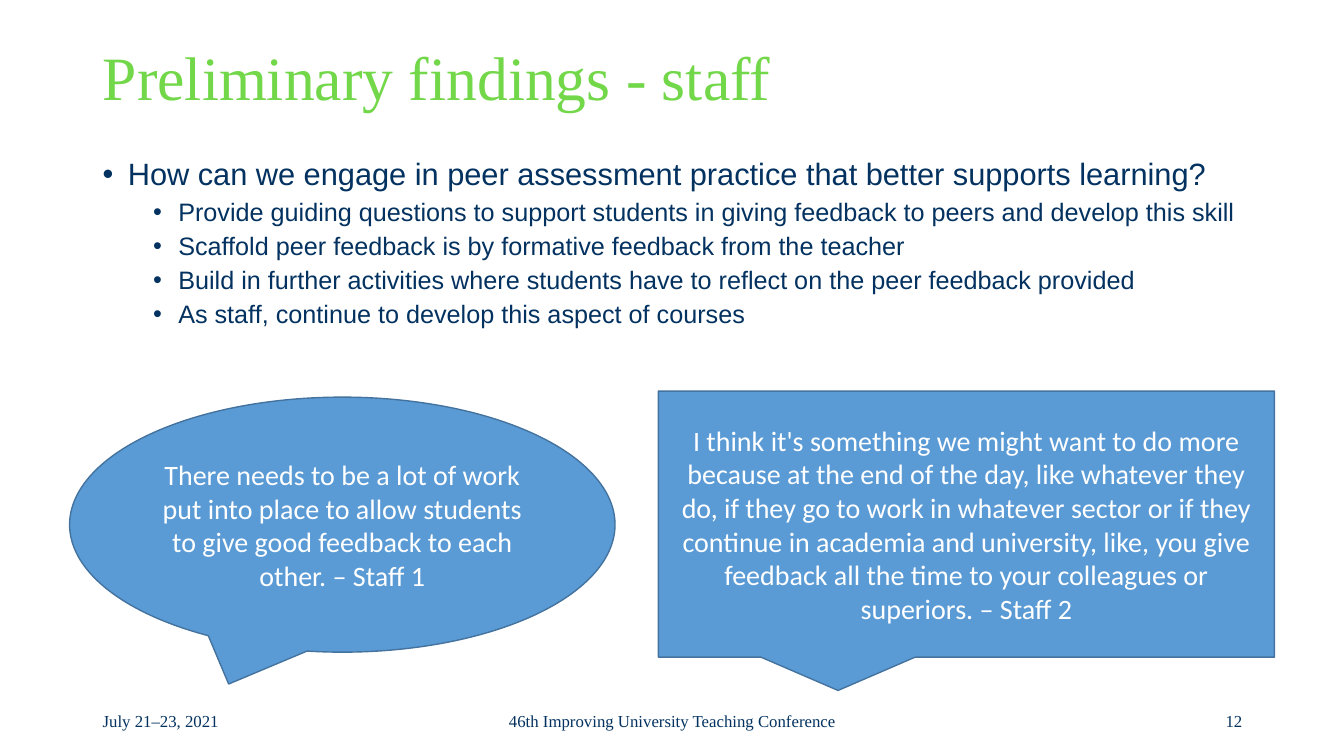
from dataclasses import dataclass

from lxml.etree import SubElement
from pptx import Presentation
from pptx.dml.color import RGBColor
from pptx.enum.shapes import MSO_SHAPE as Shape
from pptx.enum.text import MSO_ANCHOR as Anchor, MSO_AUTO_SIZE as AutoSize, PP_ALIGN as Align
from pptx.oxml.ns import qn
from pptx.util import Inches, Pt

GREEN, NAVY, BLUE, DARK_BLUE, WHITE = "72D749", "033260", "5B9BD5", "43739E", "FFFFFF"
SERIF, SANS, QUOTE_FONT = "Times New Roman", "Arial", "Calibri"


@dataclass(frozen=True)
class Box:
    left: float
    top: float
    width: float
    height: float

    def lengths(self):
        return [Inches(v) for v in (self.left, self.top, self.width, self.height)]


@dataclass(frozen=True)
class Footer:
    text: str
    box: Box
    align: Align


@dataclass(frozen=True)
class Quote:
    text: str
    box: Box
    kind: Shape


@dataclass(frozen=True)
class Level:
    size: float
    indent: float
    before: float


TITLE_BOX = Box(0.92, 0.4, 11.5, 0.8)
BODY_BOX = Box(0.92, 1.53, 11.5, 2.57)
LEVELS = [Level(22, 0.25, 0), Level(18, 0.75, 5)]
FINDINGS = [
    (0, "How can we engage in peer assessment practice that better supports learning?"),
    (1, "Provide guiding questions to support students in giving feedback to peers and develop this skill"),
    (1, "Scaffold peer feedback is by formative feedback from the teacher"),
    (1, "Build in further activities where students have to reflect on the peer feedback provided"),
    (1, "As staff, continue to develop this aspect of courses"),
]
FOOTERS = [
    Footer("12", Box(9.42, 6.95, 3, 0.4), Align.RIGHT),
    Footer("July 21–23, 2021", Box(0.92, 6.95, 3, 0.4), Align.LEFT),
    Footer("46th Improving University Teaching Conference", Box(4.42, 6.95, 4.5, 0.4), Align.CENTER),
]
QUOTES = [
    Quote(
        "I think it's something we might want to do more because at the end of the day, "
        "like whatever they do, if they go to work in whatever sector or if they continue "
        "in academia and university, like, you give feedback all the time to your "
        "colleagues or superiors. – Staff 2",
        Box(6.53, 3.88, 6.11, 2.64), Shape.RECTANGULAR_CALLOUT),
    Quote(
        "There needs to be a lot of work put into place to allow students to give good "
        "feedback to each other. – Staff 1",
        Box(0.69, 3.94, 5.41, 2.53), Shape.OVAL_CALLOUT),
]


def rgb(color: str) -> RGBColor:
    return RGBColor.from_string(color)


def write(p, text: str, *, size: float, font: str, color: str,
          align: Align = Align.LEFT, spacing: float = 1.0, before: float = 0) -> None:
    p.alignment = align
    p.line_spacing = spacing
    p.space_before = Pt(before)
    r = p.add_run()
    r.text = text
    r.font.size, r.font.name = Pt(size), font
    r.font.color.rgb = rgb(color)


def set_frame(sp, anchor: Anchor):
    tf = sp.text_frame
    tf.word_wrap = True
    tf.auto_size = AutoSize.NONE
    tf.vertical_anchor = anchor
    return tf


def add_bullet(p, indent: float) -> None:
    """Give the paragraph a hanging round bullet with its text at the indent."""
    pPr = p._p.get_or_add_pPr()
    pPr.set("marL", str(Inches(indent)))
    pPr.set("indent", str(Inches(-0.25)))
    SubElement(pPr, qn("a:buFont"), typeface=SANS)
    SubElement(pPr, qn("a:buChar"), char="•")


def add_title(s, text: str) -> None:
    sp = s.shapes.title
    sp.left, sp.top, sp.width, sp.height = TITLE_BOX.lengths()
    tf = set_frame(sp, Anchor.MIDDLE)
    write(tf.paragraphs[0], text, size=44, font=SERIF, color=GREEN, spacing=0.9)


def add_findings(s) -> None:
    tf = set_frame(s.shapes.add_textbox(*BODY_BOX.lengths()), Anchor.TOP)
    for i, (depth, text) in enumerate(FINDINGS):
        p = tf.add_paragraph() if i else tf.paragraphs[0]
        level = LEVELS[depth]
        p.level = depth
        add_bullet(p, level.indent)
        write(p, text, size=level.size, font=SANS, color=NAVY, spacing=0.9, before=level.before)


def add_footer(s, footer: Footer) -> None:
    tf = set_frame(s.shapes.add_textbox(*footer.box.lengths()), Anchor.MIDDLE)
    write(tf.paragraphs[0], footer.text, size=12, font=SERIF, color=NAVY, align=footer.align)


def add_quote(s, quote: Quote) -> None:
    sp = s.shapes.add_shape(quote.kind, *quote.box.lengths())
    sp.shadow.inherit = False
    sp.fill.solid()
    sp.fill.fore_color.rgb = rgb(BLUE)
    sp.line.color.rgb = rgb(DARK_BLUE)
    sp.line.width = Pt(1)
    tf = set_frame(sp, Anchor.MIDDLE)
    write(tf.paragraphs[0], quote.text, size=20, font=QUOTE_FONT, color=WHITE, align=Align.CENTER)


def main() -> None:
    prs = Presentation()
    prs.slide_width, prs.slide_height = Inches(13.33), Inches(7.5)
    s = prs.slides.add_slide(prs.slide_layouts[5])
    add_title(s, "Preliminary findings - staff")
    add_findings(s)
    for footer in FOOTERS:
        add_footer(s, footer)
    for quote in QUOTES:
        add_quote(s, quote)
    prs.save("out.pptx")


if __name__ == "__main__":
    main()
